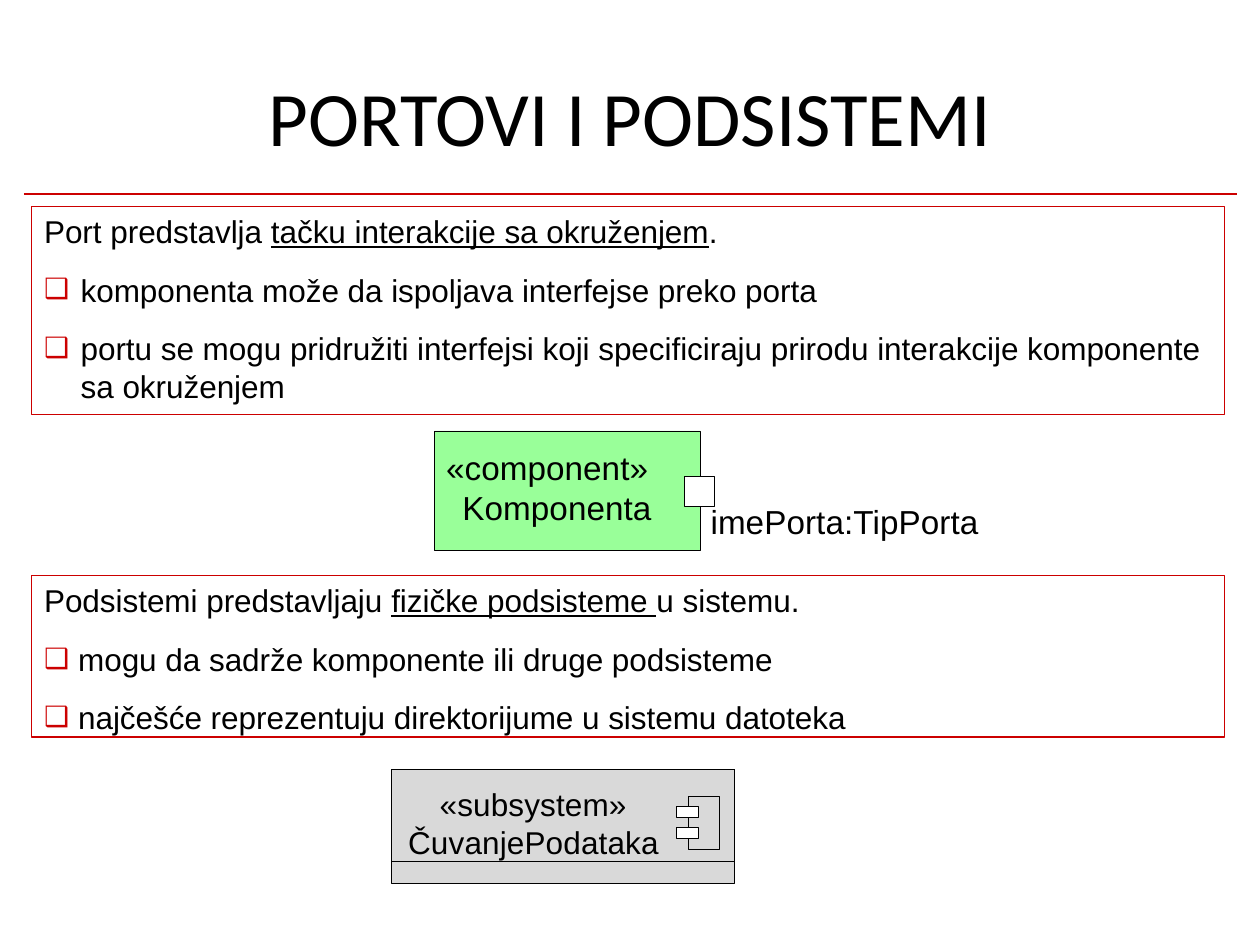
from lxml import etree
from pptx import Presentation
from pptx.dml.color import RGBColor
from pptx.enum.shapes import MSO_CONNECTOR, MSO_SHAPE
from pptx.enum.text import MSO_ANCHOR, MSO_AUTO_SIZE, PP_ALIGN
from pptx.oxml.ns import qn
from pptx.util import Inches, Pt

RECTANGLE = MSO_SHAPE.RECTANGLE
STRAIGHT = MSO_CONNECTOR.STRAIGHT
TOP, MIDDLE = MSO_ANCHOR.TOP, MSO_ANCHOR.MIDDLE
LEFT, CENTER = PP_ALIGN.LEFT, PP_ALIGN.CENTER
FIXED = MSO_AUTO_SIZE.NONE

BLACK, WHITE, RED = "000000", "FFFFFF", "CC0000"
GREEN, GRAY = "99FF99", "D9D9D9"

TITLE = "PORTOVI I PODSISTEMI"
PANELS = [
    {
        "place": (0.25, 1.64, 9.47, 1.65),
        "lead": [("Port predstavlja ", False), ("tačku interakcije sa okruženjem", True), (".", False)],
        "points": [
            "komponenta može da ispoljava interfejse preko porta",
            "portu se mogu pridružiti interfejsi koji specificiraju prirodu interakcije komponente sa okruženjem",
        ],
        "margin": 0.39,
    },
    {
        "place": (0.25, 4.57, 9.47, 1.28),
        "lead": [("Podsistemi predstavljaju ", False), ("fizičke podsisteme ", True), ("u sistemu.", False)],
        "points": [
            "mogu da sadrže komponente ili druge podsisteme",
            "najčešće reprezentuju direktorijume u sistemu datoteka",
        ],
        "margin": 0.37,
    },
]
COMPONENT = [((3.45, 3.42, 2.11, 0.95), GREEN), ((5.43, 3.78, 0.24, 0.24), WHITE)]
SUBSYSTEM = [((3.11, 6.11, 2.72, 0.9), GRAY), ((3.11, 6.11, 2.72, 0.73), None)]
ICON = [((5.46, 6.32, 0.25, 0.42), None), ((5.37, 6.4, 0.17, 0.09), WHITE), ((5.37, 6.57, 0.17, 0.08), WHITE)]
LABELS = [
    ("«component»\vKomponenta", (3.52, 3.55, 1.85, 0.64), {"size": 19, "margin": 0.15, "indent": -0.13}),
    ("imePorta:TipPorta", (5.63, 3.98, 2.4, 0.33), {"size": 19, "margin": 0.01}),
    ("«subsystem»\vČuvanjePodataka", (3.11, 6.23, 2.3, 0.61), {"margin": 0.13, "indent": 0.25}),
]


def color(value):
    return RGBColor.from_string(value)


def place_shape(shape, place):
    shape.left, shape.top, shape.width, shape.height = map(Inches, place)


def prepare_frame(frame, anchor=TOP, top=0):
    frame.auto_size = FIXED
    frame.word_wrap = True
    frame.vertical_anchor = anchor
    frame.margin_left = frame.margin_right = frame.margin_bottom = 0
    frame.margin_top = Inches(top)


def write(para, spans, size=18, font="Arial", align=LEFT, before=0,
          margin=0, indent=0, tracking=0, bullet=None):
    para.alignment = align
    para.line_spacing = 1.0
    para.space_before = Pt(before)
    para.space_after = Pt(0)
    properties = para._p.get_or_add_pPr()
    properties.set("marL", str(Inches(margin)))
    properties.set("indent", str(Inches(indent)))
    if bullet:
        tint = etree.SubElement(properties, qn("a:buClr"))
        etree.SubElement(tint, qn("a:srgbClr"), val=RED)
        etree.SubElement(properties, qn("a:buSzPct"), val="89000")
        etree.SubElement(properties, qn("a:buChar"), char=bullet)
    else:
        etree.SubElement(properties, qn("a:buNone"))
    for text, underlined in spans:
        for number, piece in enumerate(text.split("\v")):
            if number:
                para.add_line_break()
            span = para.add_run()
            span.text = piece
            span.font.size = Pt(size)
            span.font.name = font
            span.font.underline = underlined
            span.font.color.rgb = color(BLACK)
            span._r.get_or_add_rPr().set("spc", str(tracking))


def add_box(page, place, fill):
    box = page.shapes.add_shape(RECTANGLE, *map(Inches, place))
    box.shadow.inherit = False
    if fill:
        box.fill.solid()
        box.fill.fore_color.rgb = color(fill)
    else:
        box.fill.background()
    box.line.color.rgb = color(BLACK)
    box.line.width = Pt(0.4)


def fill_panel(box, panel):
    place_shape(box, panel["place"])
    box.line.color.rgb = color(RED)
    box.line.width = Pt(0.72)
    frame = box.text_frame
    prepare_frame(frame, top=0.04)
    write(frame.paragraphs[0], panel["lead"], margin=0.1, tracking=-2)
    for point in panel["points"]:
        write(frame.add_paragraph(), [(point, False)], before=12, margin=panel["margin"],
              indent=0.1 - panel["margin"], tracking=-2, bullet="❑")


def main():
    deck = Presentation()
    deck.slide_width, deck.slide_height = Inches(10), Inches(7.5)
    page = deck.slides.add_slide(deck.slide_layouts[3])

    title = page.shapes.title
    place_shape(title, (0.5, 0.55, 9, 0.74))
    prepare_frame(title.text_frame, anchor=MIDDLE)
    write(title.text_frame.paragraphs[0], [(TITLE, False)], size=44, font="Calibri", align=CENTER)

    rule = page.shapes.add_connector(STRAIGHT, *map(Inches, (0.19, 1.54, 9.82, 1.54)))
    rule.line.color.rgb = color(RED)
    rule.line.width = Pt(0.96)
    etree.SubElement(rule._element.spPr, qn("a:effectLst"))

    for number, panel in enumerate(PANELS, 1):
        fill_panel(page.placeholders[number], panel)
    for place, fill in COMPONENT + SUBSYSTEM + ICON:
        add_box(page, place, fill)
    for text, place, style in LABELS:
        label = page.shapes.add_textbox(*map(Inches, place))
        prepare_frame(label.text_frame)
        write(label.text_frame.paragraphs[0], [(text, False)], tracking=8, **style)

    deck.save("out.pptx")


if __name__ == "__main__":
    main()
